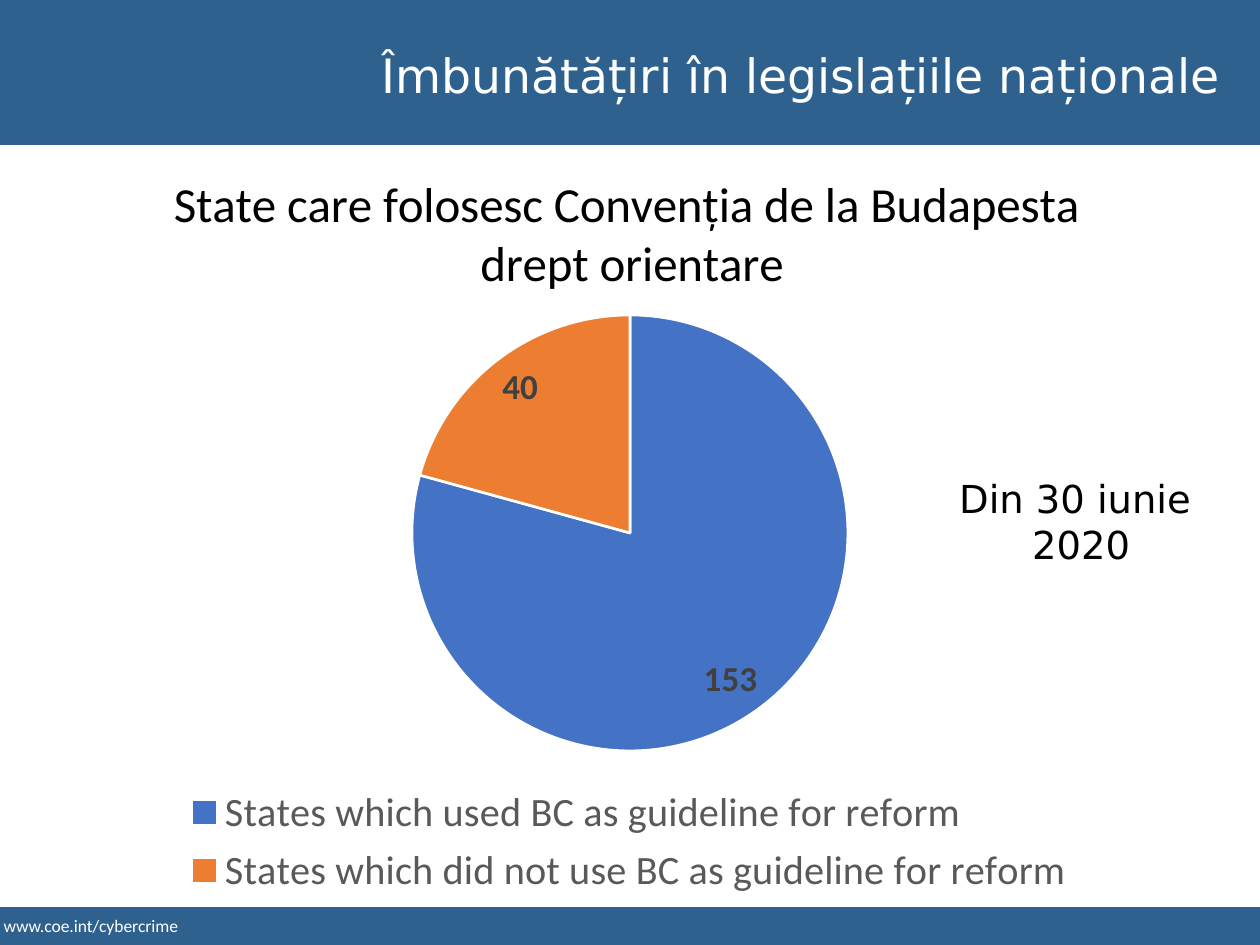
from lxml import etree
from pptx import Presentation
from pptx.chart.data import CategoryChartData
from pptx.dml.color import RGBColor
from pptx.enum.chart import XL_CHART_TYPE, XL_LABEL_POSITION, XL_LEGEND_POSITION
from pptx.enum.shapes import MSO_SHAPE
from pptx.enum.text import PP_ALIGN
from pptx.oxml.ns import qn
from pptx.util import Inches, Pt

COLORS = {"band": "2F618F", "white": "FFFFFF", "black": "000000", "legend": "595959",
          "label": "404040", "used": "4472C4", "not_used": "ED7D31"}

BANDS = [(0, -0.03, 10, 1.18), (0, 7.2, 10, 0.32)]

TEXTS = [
    {"lines": ["www.coe.int/cybercrime"], "box": (-0.07, 7.21, 3.52, 0.27),
     "align": PP_ALIGN.LEFT, "font": ("Calibri", 10, "white")},
    {"lines": ["Îmbunătățiri în legislațiile naționale "], "box": (1.39, 0.32, 8.51, 0.56),
     "align": PP_ALIGN.RIGHT, "font": ("DejaVu Sans", 27, "white")},
    {"lines": ["Din 30 iunie ", "2020"], "box": (6.02, 3.72, 5.12, 0.84),
     "align": PP_ALIGN.CENTER, "font": ("DejaVu Sans", 22, "black")},
]

CHART_BOX = (0, 1.15, 10, 6.02)
CHART_TITLE = ["State care folosesc Convenția de la Budapesta ", "drept orientare"]
TITLE_CORNER = (1.35, 1.35)
PIE_CENTER, PIE_RADIUS = (5, 4.23), 1.73
STATES = [
    ("States which used BC as guideline for reform", 153, "used"),
    ("States which did not use BC as guideline for reform", 40, "not_used"),
]


def rgb(name):
    return RGBColor.from_string(COLORS[name])


def set_font(font, name, size, color, bold=False):
    values = {"name": name, "size": Pt(size), "bold": bold}
    for key, value in values.items():
        setattr(font, key, value)
    font.color.rgb = rgb(color)


def fill_lines(frame, lines, align, font):
    for index, line in enumerate(lines):
        paragraph = frame.paragraphs[0] if index == 0 else frame.add_paragraph()
        paragraph.alignment = align
        run = paragraph.add_run()
        run.text = line
        set_font(run.font, *font)


def add_band(slide, box):
    shape = slide.shapes.add_shape(MSO_SHAPE.RECTANGLE, *map(Inches, box))
    shape.shadow.inherit = False
    shape.fill.solid()
    shape.fill.fore_color.rgb = rgb("band")
    shape.line.fill.background()


def add_text(slide, lines, box, align, font):
    frame = slide.shapes.add_textbox(*map(Inches, box)).text_frame
    frame.word_wrap = True
    fill_lines(frame, lines, align, font)


def place(layout, corner, size=None):
    """Fix a chart part at a slide position, given in inches."""
    left, top, width, height = CHART_BOX
    values = {"xMode": "edge", "yMode": "edge",
              "x": (corner[0] - left) / width, "y": (corner[1] - top) / height}
    if size:
        values = {"layoutTarget": "inner", **values,
                  "w": size[0] / width, "h": size[1] / height}
    for child in list(layout):
        layout.remove(child)
    manual = etree.SubElement(layout, qn("c:manualLayout"))
    for tag, value in values.items():
        text = value if isinstance(value, str) else f"{value:.4f}"
        etree.SubElement(manual, qn(f"c:{tag}")).set("val", text)


def add_pie(slide):
    data = CategoryChartData()
    data.categories = [name for name, _, _ in STATES]
    data.add_series("Series 1", [count for _, count, _ in STATES])
    chart = slide.shapes.add_chart(XL_CHART_TYPE.PIE, *map(Inches, CHART_BOX), data).chart
    set_font(chart.font, "Calibri", 10, "black")

    title = chart.chart_title
    fill_lines(title.text_frame, CHART_TITLE, PP_ALIGN.CENTER, ("Calibri", 28, "black"))
    title.include_in_layout = False
    place(title._element.get_or_add_layout() if hasattr(title._element, "get_or_add_layout")
          else title._element.find(qn("c:layout")), TITLE_CORNER)

    chart.has_legend = True
    chart.legend.position = XL_LEGEND_POSITION.BOTTOM
    chart.legend.include_in_layout = False
    set_font(chart.legend.font, "Calibri", 23, "legend")

    plot = chart.plots[0]
    plot.vary_by_categories = True
    for index, (_, _, color) in enumerate(STATES):
        point = plot.series[0].points[index]
        point.format.fill.solid()
        point.format.fill.fore_color.rgb = rgb(color)
        point.format.line.color.rgb = rgb("white")
        point.format.line.width = Pt(1.5)
    plot.has_data_labels = True
    labels = plot.data_labels
    labels.show_value = True
    labels.show_percentage = False
    labels.position = XL_LABEL_POSITION.INSIDE_END
    set_font(labels.font, "Calibri", 20, "label", bold=True)

    area = chart._chartSpace.chart.plotArea
    layout = area.find(qn("c:layout"))
    if layout is None:
        layout = etree.Element(qn("c:layout"))
        area.insert(0, layout)
    place(layout, [center - PIE_RADIUS for center in PIE_CENTER], [2 * PIE_RADIUS] * 2)


def main():
    presentation = Presentation()
    presentation.slide_width, presentation.slide_height = Inches(10), Inches(7.5)
    slide = presentation.slides.add_slide(presentation.slide_layouts[6])
    for box in BANDS:
        add_band(slide, box)
    add_text(slide, **TEXTS[0])
    add_text(slide, **TEXTS[1])
    add_pie(slide)
    add_text(slide, **TEXTS[2])
    presentation.save("out.pptx")


if __name__ == "__main__":
    main()
